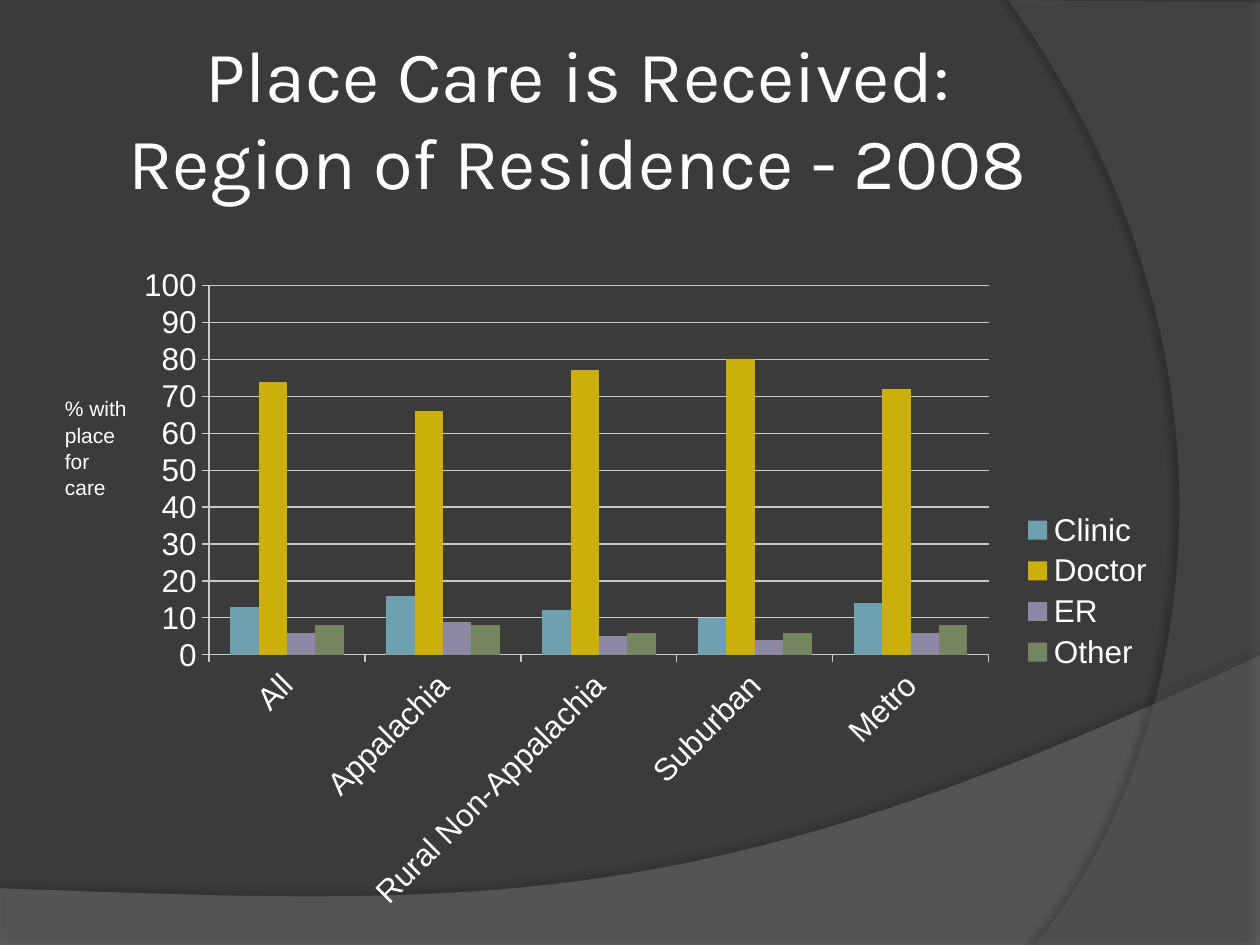
from lxml.etree import SubElement
from pptx import Presentation
from pptx.chart.data import CategoryChartData
from pptx.dml.color import RGBColor
from pptx.enum.chart import XL_CHART_TYPE, XL_LEGEND_POSITION, XL_TICK_MARK
from pptx.enum.text import MSO_ANCHOR, PP_ALIGN
from pptx.oxml import parse_xml
from pptx.oxml.ns import nsdecls, qn
from pptx.util import Pt

BACKGROUND = RGBColor(0x3B, 0x3B, 0x3B)
WAVE = RGBColor(0x7F, 0x7F, 0x7F)
ARC = RGBColor(0x5E, 0x5E, 0x5E)
WHITE = RGBColor(0xFF, 0xFF, 0xFF)
GRID = RGBColor(0xC8, 0xC8, 0xC8)
BLUE = RGBColor(0x6E, 0xA0, 0xB0)
YELLOW = RGBColor(0xCC, 0xAF, 0x0A)
PURPLE = RGBColor(0x8D, 0x89, 0xA4)
GREEN = RGBColor(0x74, 0x85, 0x60)

REGIONS = ["All", "Appalachia", "Rural Non-Appalachia", "Suburban", "Metro"]
SERIES = [
    ("Clinic", (13, 16, 12, 10, 14), BLUE),
    ("Doctor", (74, 66, 77, 80, 72), YELLOW),
    ("ER", (6, 9, 5, 4, 6), PURPLE),
    ("Other", (8, 8, 6, 6, 8), GREEN),
]


def bezier(points, steps=60):
    """Return points along a cubic curve, without its start."""
    a, b, c, d = points
    ts = [i / steps for i in range(1, steps + 1)]
    return [tuple((1 - t) ** 3 * a[k] + 3 * (1 - t) ** 2 * t * b[k]
                  + 3 * (1 - t) * t ** 2 * c[k] + t ** 3 * d[k]
                  for k in (0, 1)) for t in ts]


def add_swoosh(s, corners, curve, color, opacity, shade, blur, dist, angle):
    """Add a translucent shape with one curved edge and a soft shadow."""
    pts = [(Pt(x), Pt(y)) for x, y in corners + bezier(curve)]
    builder = s.shapes.build_freeform(*pts[0])
    builder.add_line_segments(pts[1:], close=True)
    sp = builder.convert_to_shape()
    sp.line.fill.background()
    sp.fill.solid()
    sp.fill.fore_color.rgb = color
    sppr = sp._element.spPr
    clr = sppr.find(qn("a:solidFill"))[0]
    SubElement(clr, qn("a:alpha")).set("val", str(opacity * 1000))
    sppr.append(parse_xml(
        f'<a:effectLst {nsdecls("a")}><a:outerShdw blurRad="{Pt(blur)}" '
        f'dist="{Pt(dist)}" dir="{angle * 60000}" algn="ctr" rotWithShape="0">'
        f'<a:srgbClr val="000000"><a:alpha val="{shade * 1000}"/></a:srgbClr>'
        '</a:outerShdw></a:effectLst>'))


def add_text(s, text, box, size, font, align=PP_ALIGN.LEFT,
             anchor=MSO_ANCHOR.TOP, inset=(7.2, 3.6), spacing=None):
    """Add a wrapped text box with one paragraph."""
    tf = s.shapes.add_textbox(*map(Pt, box)).text_frame
    tf.word_wrap = True
    tf.vertical_anchor = anchor
    tf.margin_left = tf.margin_right = Pt(inset[0])
    tf.margin_top = tf.margin_bottom = Pt(inset[1])
    p = tf.paragraphs[0]
    p.text = text
    p.alignment = align
    p.line_spacing = spacing
    for r in p.runs:
        r.font.size = Pt(size)
        r.font.name = font
        r.font.color.rgb = WHITE


def set_layout(element, x, y, w, h, inner=False):
    """Place a chart part by fractions of the chart area."""
    for old in element.findall(qn("c:layout")):
        element.remove(old)
    target = '<c:layoutTarget val="inner"/>' if inner else ""
    layout = parse_xml(
        f'<c:layout {nsdecls("c")}><c:manualLayout>{target}'
        '<c:xMode val="edge"/><c:yMode val="edge"/>'
        f'<c:x val="{x}"/><c:y val="{y}"/><c:w val="{w}"/><c:h val="{h}"/>'
        '</c:manualLayout></c:layout>')
    pos = element.find(qn("c:legendPos"))
    element.insert(0 if pos is None else element.index(pos) + 1, layout)


def style_axis(axis):
    """Give an axis its line, ticks and label size."""
    axis.format.line.color.rgb = GRID
    axis.format.line.width = Pt(0.75)
    axis.major_tick_mark = XL_TICK_MARK.OUTSIDE
    axis.minor_tick_mark = XL_TICK_MARK.NONE
    axis.tick_labels.font.size = Pt(18)
    axis.tick_labels.font.color.rgb = WHITE


def add_care_chart(s, box):
    """Add the clustered columns of places of care by region."""
    data = CategoryChartData()
    data.categories = REGIONS
    for name, values, _ in SERIES:
        data.add_series(name, values)
    chart = s.shapes.add_chart(
        XL_CHART_TYPE.COLUMN_CLUSTERED, *map(Pt, box), data).chart
    chart.has_title = False
    chart.font.size = Pt(18)
    chart.font.name = "Arial"
    chart.font.color.rgb = WHITE

    plot = chart.plots[0]
    plot.gap_width = 150
    plot.overlap = 0
    plot.vary_by_categories = False
    for series, (_, _, color) in zip(plot.series, SERIES):
        series.format.fill.solid()
        series.format.fill.fore_color.rgb = color

    cat, val = chart.category_axis, chart.value_axis
    style_axis(cat)
    style_axis(val)
    cat._element.find(qn("c:txPr"))[0].set("rot", "-2700000")
    val.minimum_scale, val.maximum_scale, val.major_unit = 0, 100, 10
    val.has_major_gridlines = True
    val.major_gridlines.format.line.color.rgb = GRID
    val.major_gridlines.format.line.width = Pt(0.75)

    chart.has_legend = True
    chart.legend.position = XL_LEGEND_POSITION.RIGHT
    chart.legend.include_in_layout = False
    chart.legend.font.size = Pt(18)
    chart.legend.font.color.rgb = WHITE
    set_layout(chart.legend._element, 0.86, 0.38, 0.13, 0.25)
    plot_area = chart._chartSpace.chart.plotArea
    set_layout(plot_area, 0.08, 0.05, 0.75, 0.55, inner=True)


def main():
    """Build and save the slide."""
    prs = Presentation()
    prs.slide_width, prs.slide_height = Pt(720), Pt(540)
    s = prs.slides.add_slide(prs.slide_layouts[6])
    s.background.fill.solid()
    s.background.fill.fore_color.rgb = BACKGROUND

    add_swoosh(s, [(0, 507.6), (0, 540), (720, 540), (720, 374.4)],
               [(720, 374.4), (402.5, 524.9), (281.5, 517.7), (0, 507.6)],
               WAVE, 45, shade=35, blur=4, dist=3.5, angle=270)
    add_swoosh(s, [(720, 1.4), (720, 540), (591.1, 540)],
               [(591.1, 540), (673.2, 445.7), (733, 216), (576, 0)],
               ARC, 40, shade=45, blur=4, dist=4, angle=180)
    add_text(s, "Place Care is Received:\vRegion of Residence - 2008",
             (36, 21.6, 588.2, 90), 41.4, "Karla", align=PP_ALIGN.CENTER,
             anchor=MSO_ANCHOR.MIDDLE, inset=(3.6, 3.6))
    add_care_chart(s, (72, 144, 594, 383.8))
    add_text(s, "% with place for care", (30, 221.8, 54, 65.5), 12, "Arial",
             spacing=1.05)
    prs.save("out.pptx")


if __name__ == "__main__":
    main()
